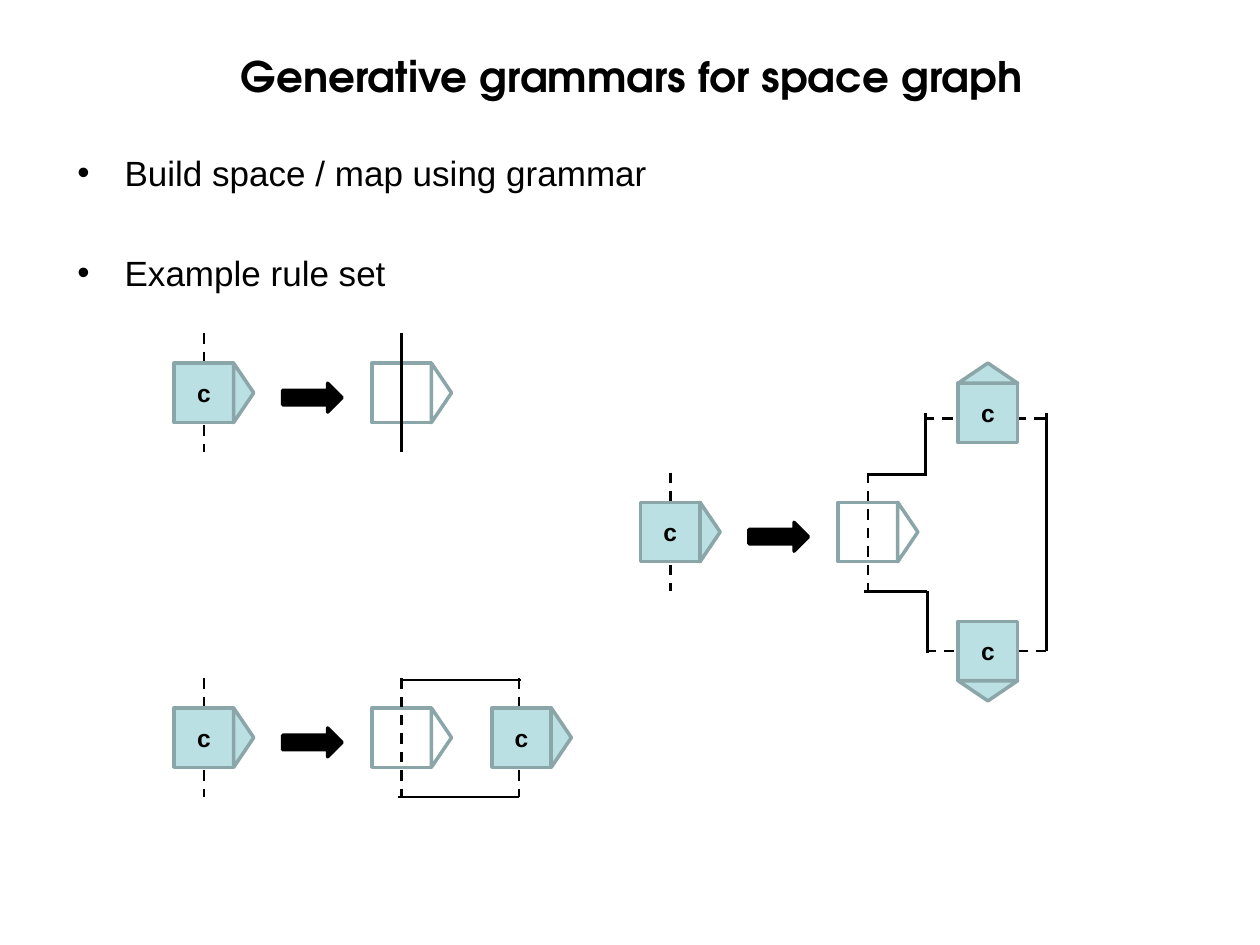
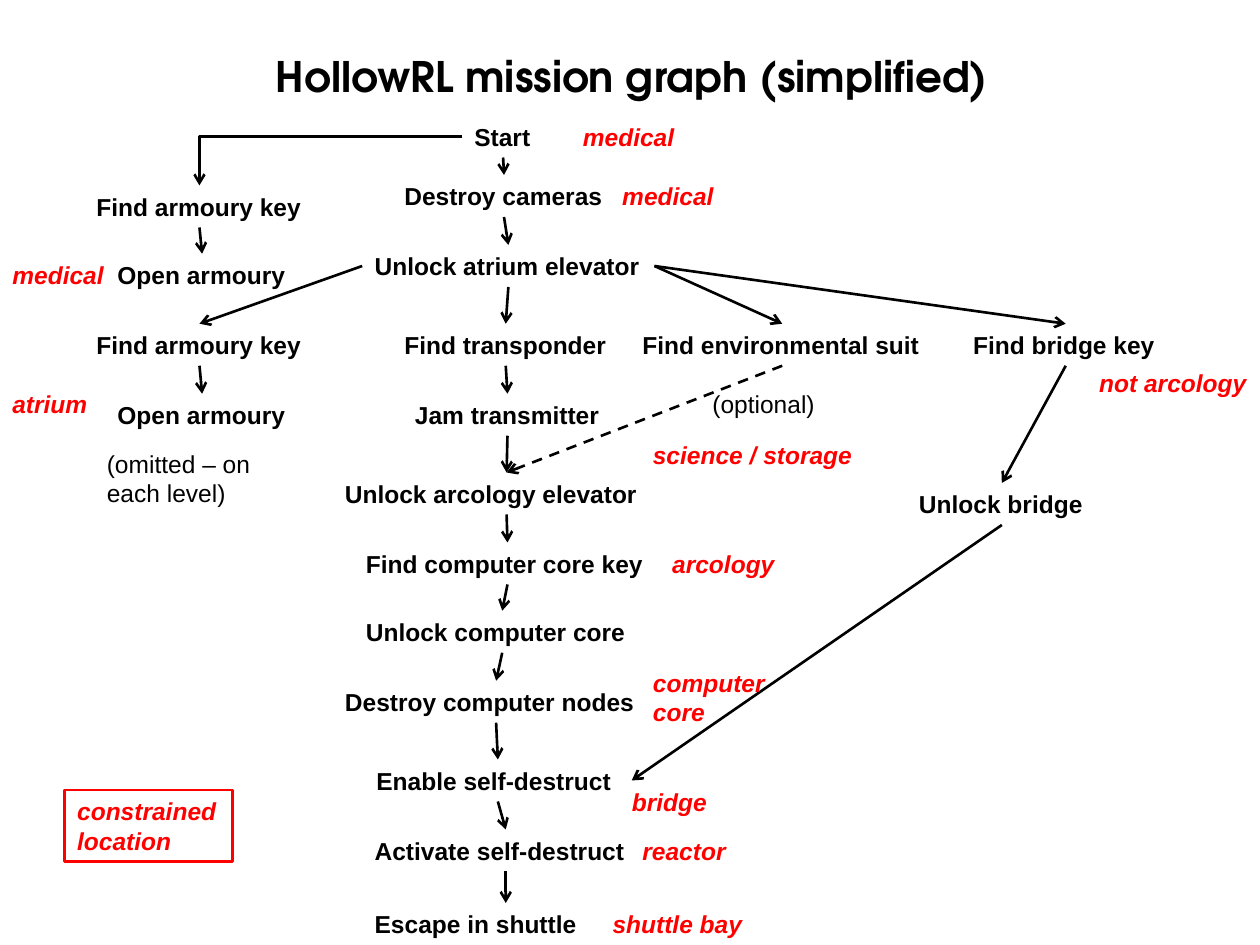
from itertools import pairwise
from math import cos, radians, sin

from lxml import etree
from pptx import Presentation
from pptx.dml.color import RGBColor
from pptx.enum.dml import MSO_LINE
from pptx.enum.shapes import MSO_CONNECTOR as CONN, MSO_SHAPE as SHAPE
from pptx.enum.text import MSO_ANCHOR as ANCHOR, MSO_AUTO_SIZE as AUTO, PP_ALIGN as ALIGN
from pptx.oxml.ns import qn
from pptx.util import Pt

COLORS = {"ink": "000000", "room": "BBE0E3", "edge": "8AA6A8", "empty": "FFFFFF", "place": "FF0000"}
TITLE_FONT, BODY_FONT = "TeX Gyre Adventor", "Arial"

# Space grammar: every rule turns a marked room into what stands right of the arrow.
GRAMMAR_TITLE = "Generative grammars for space graph"
BULLETS = [("Build space / map using grammar", 3), ("Example rule set", 33)]  # text, space before
ROOM, ROOF = 34, 11.5
RESULT_X, NEXT_X, ARROW_X = 113, 181.5, 62
EAST, SOUTH, NORTH = 90, 180, 0

# Offsets from the rule's first room: lines (x1, y1, x2, y2, dashed), rooms (x, y, heading)
RULES = [
    {"at": (99.5, 207.5), "open": False, "lines": [], "rooms": []},
    {"at": (99.5, 404.5), "open": True,
     "lines": [(198, -16, 130, -16, False), (197, 51, 128, 51, False), (197, -17, 197, 51, True)],
     "rooms": [(NEXT_X, 0, EAST)]},
    {"at": (366, 287), "open": True,
     "lines": [(164, -16, 130, -16, False), (164, 51, 128, 51, False),
               (163, -51, 163, -16, False), (231, -48, 163, -48, True),
               (232, -51, 232, 85, False), (164, 51, 164, 86, False),
               (232, 85, 164, 85, True)],
     "rooms": [(NEXT_X, -68, NORTH), (NEXT_X, 68, SOUTH)]},
]

# Mission graph: key -> text, left, top, width
MISSION_TITLE = "HollowRL mission graph (simplified)"
LINE_H = 24
STEPS = {
    "start": ("Start", 264, 66, 47),
    "cameras": ("Destroy cameras", 224, 100, 128),
    "atrium": ("Unlock atrium elevator", 207, 140, 167),
    "transponder": ("Find transponder", 224, 185, 130),
    "jam": ("Jam transmitter", 230, 225, 120),
    "arcology": ("Unlock arcology elevator", 190, 270, 199),
    "core key": ("Find computer core key", 202, 310, 176),
    "core": ("Unlock computer core", 202, 349, 170),
    "nodes": ("Destroy computer nodes", 190, 389, 187),
    "enable": ("Enable self-destruct", 208, 434, 153),
    "activate": ("Activate self-destruct", 207, 474, 164),
    "escape": ("Escape in shuttle", 207, 516, 164),
    "armoury key 1": ("Find armoury key", 48, 106, 132),
    "armoury 1": ("Open armoury", 60, 145, 111),
    "armoury key 2": ("Find armoury key", 48, 185, 132),
    "armoury 2": ("Open armoury", 60, 225, 111),
    "suit": ("Find environmental suit", 360, 185, 174),
    "bridge key": ("Find bridge key", 549, 185, 120),
    "bridge": ("Unlock bridge", 518, 276, 109),
}
CHAINS = [
    ["start", "cameras", "atrium", "transponder", "jam", "arcology", "core key", "core",
     "nodes", "enable", "activate", "escape"],
    ["armoury key 1", "armoury 1"],
    ["armoury key 2", "armoury 2"],
    ["bridge key", "bridge"],
]
TOP, LEFT, BOTTOM, RIGHT = range(4)
BRANCHES = [  # from, side, to, side
    ("atrium", RIGHT, "suit", TOP),
    ("atrium", LEFT, "armoury key 2", TOP),
    ("atrium", RIGHT, "bridge key", TOP),
    ("bridge", BOTTOM, "enable", RIGHT),
]
NOTES = [("(omitted – on each level)", 54, 253, 113, 41), ("(optional)", 400, 219, 73, LINE_H)]
PLACES = [
    ("medical", 326, 66, 67), ("medical", 348.5, 100, 67), ("science / storage", 366, 248, 130),
    ("not arcology", 621, 207, 99), ("arcology", 377, 310, 73), ("bridge", 354, 446, 58),
    ("reactor", 360, 474, 63), ("shuttle bay", 343, 516, 89), ("medical", 0, 145, 67),
    ("atrium", 0, 219, 58), ("computer core", 366, 378, 96, 41),
]
LEGEND = ("constrained location", 37, 451.5, 96, 41)


def rgb(name):
    return RGBColor.from_string(COLORS[name])


def add_run(p, text, size, color="ink", font=BODY_FONT, bold=False, italic=False):
    r = p.add_run()
    r.text = text
    r.font.name, r.font.size = font, Pt(size)
    r.font.bold, r.font.italic = bold, italic
    r.font.color.rgb = rgb(color)


def place(sp, x, y, w, h):
    sp.left, sp.top, sp.width, sp.height = Pt(x), Pt(y), Pt(w), Pt(h)


def add_titled_slide(prs, layout, title):
    slide = prs.slides.add_slide(prs.slide_layouts[layout])
    sp = slide.shapes.title
    place(sp, 37, 21, 648, 44)
    tf = sp.text_frame
    tf.auto_size, tf.vertical_anchor = AUTO.NONE, ANCHOR.MIDDLE
    p = tf.paragraphs[0]
    p.alignment = ALIGN.CENTER
    add_run(p, title, 24, font=TITLE_FONT, bold=True)
    return slide


def style_line(c, dashed=False, arrow=False):
    c.line.color.rgb, c.line.width = rgb("ink"), Pt(1.5)
    if dashed:
        c.line.dash_style = MSO_LINE.DASH
    if arrow:
        etree.SubElement(c.line._get_or_add_ln(), qn("a:tailEnd"), type="arrow")
    etree.SubElement(c._element.spPr, qn("a:effectLst"))


def add_line(shapes, x1, y1, x2, y2, dashed):
    style_line(shapes.add_connector(CONN.STRAIGHT, Pt(x1), Pt(y1), Pt(x2), Pt(y2)), dashed)


def add_solid(shapes, kind, x, y, w, h, fill, edge):
    sp = shapes.add_shape(kind, Pt(x), Pt(y), Pt(w), Pt(h))
    sp.shadow.inherit = False
    sp.fill.solid()
    sp.fill.fore_color.rgb = rgb(fill)
    sp.line.color.rgb, sp.line.width = rgb(edge), Pt(2)
    return sp


def add_room(shapes, x, y, heading=EAST, marked=True):
    """Draw a square room with a roof that points along its heading (degrees from north)."""
    fill = "room" if marked else "empty"
    sp = add_solid(shapes, SHAPE.RECTANGLE, x, y, ROOM, ROOM, fill, "edge")
    if marked:
        sp.text_frame.vertical_anchor = ANCHOR.MIDDLE
        p = sp.text_frame.paragraphs[0]
        p.alignment = ALIGN.CENTER
        add_run(p, "c", 14, bold=True)
    reach = (ROOM + ROOF) / 2
    cx = x + ROOM / 2 + reach * sin(radians(heading))
    cy = y + ROOM / 2 - reach * cos(radians(heading))
    roof = add_solid(shapes, SHAPE.ISOSCELES_TRIANGLE, cx - ROOM / 2, cy - ROOF / 2,
                     ROOM, ROOF, fill, "edge")
    roof.rotation = heading


def add_rule(slide, rule):
    x, y = rule["at"]
    shapes = slide.shapes.add_group_shape().shapes

    def add_door(left, dashed):
        mid = left + ROOM / 2
        add_line(shapes, mid, y - ROOM / 2, mid, y + 1.5 * ROOM, dashed)

    add_door(x, True)
    add_room(shapes, x, y)
    add_solid(shapes, SHAPE.RIGHT_ARROW, x + ARROW_X, y + 11.5, ROOM, 16.5, "ink", "ink")
    add_room(shapes, x + RESULT_X, y, marked=False)
    add_door(x + RESULT_X, rule["open"])
    for x1, y1, x2, y2, dashed in rule["lines"]:
        add_line(shapes, x + x1, y + y1, x + x2, y + y2, dashed)
    for dx, dy, heading in rule["rooms"]:
        add_room(shapes, x + dx, y + dy, heading)


def build_grammar_slide(prs):
    slide = add_titled_slide(prs, 1, GRAMMAR_TITLE)
    body = slide.placeholders[1]
    place(body, 37, 83, 648, 57)
    tf = body.text_frame
    tf.auto_size = AUTO.NONE
    for i, (text, before) in enumerate(BULLETS):
        p = tf.add_paragraph() if i else tf.paragraphs[0]
        p.space_before = Pt(before)
        pPr = p._p.get_or_add_pPr()
        pPr.set("marL", str(Pt(27)))
        pPr.set("indent", str(-Pt(27)))
        add_run(p, text, 20)
    for rule in RULES:
        add_rule(slide, rule)


def add_label(shapes, text, x, y, w, h=LINE_H, **font):
    sp = shapes.add_textbox(Pt(x), Pt(y), Pt(w), Pt(h))
    tf = sp.text_frame
    tf.word_wrap, tf.margin_right = True, 0
    add_run(tf.paragraphs[0], text, 14, **font)
    return sp


def join(slide, start, side1, end, side2, kind=CONN.STRAIGHT, dashed=False):
    c = slide.shapes.add_connector(kind, 0, 0, 0, 0)
    c.begin_connect(start, side1)
    c.end_connect(end, side2)
    style_line(c, dashed, arrow=True)
    return c


def build_mission_slide(prs):
    slide = add_titled_slide(prs, 5, MISSION_TITLE)
    steps = {key: add_label(slide.shapes, *step, bold=True) for key, step in STEPS.items()}
    for chain in CHAINS:
        for a, b in pairwise(chain):
            join(slide, steps[a], BOTTOM, steps[b], TOP)
    for a, side1, b, side2 in BRANCHES:
        join(slide, steps[a], side1, steps[b], side2)
    join(slide, steps["suit"], BOTTOM, steps["arcology"], TOP, dashed=True)
    bend = join(slide, steps["start"], LEFT, steps["armoury key 1"], TOP, CONN.ELBOW)
    bend._element.spPr.find(qn("a:prstGeom")).set("prst", "bentConnector2")

    for note in NOTES:
        add_label(slide.shapes, *note)
    places = slide.shapes.add_group_shape().shapes
    red = {"color": "place", "bold": True, "italic": True}
    for spot in PLACES:
        add_label(places, *spot, **red)
    legend = add_label(places, *LEGEND, **red)
    legend.line.color.rgb, legend.line.width = rgb("place"), Pt(1.5)


def main():
    prs = Presentation()
    prs.slide_width, prs.slide_height = Pt(720), Pt(540)
    build_grammar_slide(prs)
    build_mission_slide(prs)
    prs.save("out.pptx")


if __name__ == "__main__":
    main()
